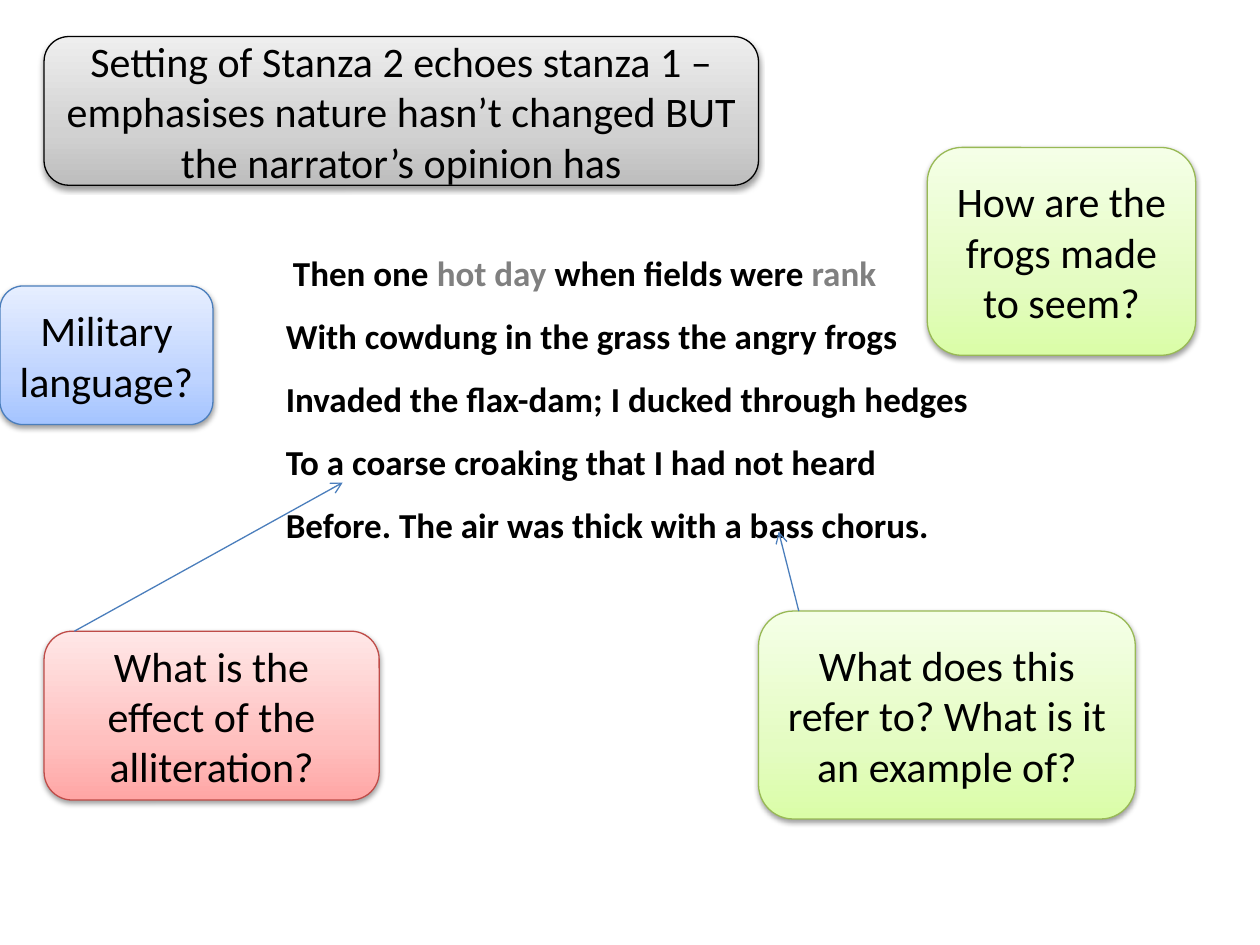
from copy import deepcopy

from lxml import etree
from pptx import Presentation
from pptx.dml.color import RGBColor
from pptx.enum.shapes import MSO_CONNECTOR, MSO_SHAPE
from pptx.enum.text import MSO_ANCHOR, MSO_AUTO_SIZE, PP_ALIGN
from pptx.oxml.ns import qn
from pptx.util import Inches, Pt

ROUNDED = MSO_SHAPE.ROUNDED_RECTANGLE
STRAIGHT = MSO_CONNECTOR.STRAIGHT
MIDDLE = MSO_ANCHOR.MIDDLE
FIT_SHAPE = MSO_AUTO_SIZE.SHAPE_TO_FIT_TEXT
CENTER = PP_ALIGN.CENTER

COLORS = {"black": "000000", "highlight": "808080", "arrow": "4B7EBC"}
THEMES = {
    "grey": {"line": "000000", "stops": ("BDBDBD", "D1D1D1", "EEEEEE")},
    "blue": {"line": "4B7EBC", "stops": ("A4C4FF", "BFD4FF", "E6EEFF")},
    "red": {"line": "BF4C48", "stops": ("FFA6A5", "FFC0BF", "FFE7E7")},
    "green": {"line": "98B955", "stops": ("DAFDA7", "E4FCC2", "F5FFE7")},
}
STOP_POSITIONS = (0, 0.35, 1)
VERSE_FONT = {"name": "Calibri", "size": Pt(20), "bold": True}
INDENT_FONT = {"name": "Calibri", "size": Pt(18), "bold": False}
NOTE_FONT = {"name": "Calibri", "size": Pt(24)}

STANZA_BOX = (2.17, 1.78, 5.83, 2.63)
STANZA = [
    [(" ", "black", INDENT_FONT), ("Then one ", "black", VERSE_FONT),
     ("hot day ", "highlight", VERSE_FONT),
     ("when fields were ", "black", VERSE_FONT),
     ("rank", "highlight", VERSE_FONT)],
    [("With cowdung in the grass the angry frogs", "black", VERSE_FONT)],
    [("Invaded the flax-dam; I ducked through hedges", "black", VERSE_FONT)],
    [("To a coarse croaking that I had not heard", "black", VERSE_FONT)],
    [("Before. The air was thick with a bass chorus.", "black", VERSE_FONT)],
]
NOTES = [
    ("Setting of Stanza 2 echoes stanza 1 – emphasises nature hasn’t changed "
     "BUT the narrator’s opinion has", "grey", (0.35, 0.29, 5.67, 1.18), None),
    ("Military language?", "blue", (0, 2.27, 1.69, 1.1), None),
    ("What is the effect of the alliteration?", "red",
     (0.35, 5.01, 2.66, 1.34), (0.24, 2.72, 3.83)),
    ("What does this refer to? What is it an example of?", "green",
     (6.02, 4.85, 2.99, 1.65), (0.32, 6.18, 4.22)),
    ("How are the frogs made to seem?", "green",
     (7.36, 1.17, 2.13, 1.65), None),
]


def rgb(value):
    """Turn a hex string into a colour."""
    return RGBColor.from_string(value)


def add_run(p, text, color, font):
    """Add a run in the given colour and font values."""
    r = p.add_run()
    r.text = text
    for name, value in font.items():
        setattr(r.font, name, value)
    r.font.color.rgb = rgb(COLORS[color])


def add_stanza(s, box):
    """Write the stanza, one paragraph for each line of verse."""
    tf = s.shapes.add_textbox(*map(Inches, box)).text_frame
    tf.word_wrap = True
    tf.auto_size = FIT_SHAPE
    for i, verse in enumerate(STANZA):
        p = tf.add_paragraph() if i else tf.paragraphs[0]
        p.line_spacing = 1.5
        for text, color, font in verse:
            add_run(p, text, color, font)


def fill_gradient(sp, stops):
    """Fill a shape with three colours running from bottom to top."""
    sp.fill.gradient()
    sp.fill.gradient_angle = 90
    first = sp._element.spPr.find(".//" + qn("a:gs"))
    first.addnext(deepcopy(first))
    for stop, position, color in zip(sp.fill.gradient_stops, STOP_POSITIONS, stops):
        stop.position = position
        stop.color.rgb = rgb(color)


def add_shadow(sp):
    """Give a shape a soft shadow falling straight down."""
    sp.shadow.inherit = False
    effects = sp._element.spPr.find(qn("a:effectLst"))
    shadow = etree.SubElement(effects, qn("a:outerShdw"), blurRad=str(Pt(3.15)),
                              dist=str(Pt(1.57)), dir="5400000", rotWithShape="0")
    color = etree.SubElement(shadow, qn("a:srgbClr"), val=COLORS["black"])
    etree.SubElement(color, qn("a:alpha"), val="38000")


def add_arrow(s, start, end):
    """Draw a thin line with an open arrowhead at its end."""
    line = s.shapes.add_connector(STRAIGHT, *map(Inches, start + end))
    line.line.color.rgb = rgb(COLORS["arrow"])
    line.line.width = Pt(0.75)
    etree.SubElement(line.line._get_or_add_ln(), qn("a:tailEnd"), type="arrow")
    etree.SubElement(line._element.spPr, qn("a:effectLst"))


def add_note(s, text, theme, box, pointer):
    """Place a rounded note, with an arrow from its top edge if it has one."""
    sp = s.shapes.add_shape(ROUNDED, *map(Inches, box))
    fill_gradient(sp, THEMES[theme]["stops"])
    sp.line.color.rgb = rgb(THEMES[theme]["line"])
    sp.line.width = Pt(0.75)
    add_shadow(sp)
    tf = sp.text_frame
    tf.word_wrap = True
    tf.vertical_anchor = MIDDLE
    p = tf.paragraphs[0]
    p.alignment = CENTER
    add_run(p, text, "black", NOTE_FONT)
    if pointer:
        offset, x, y = pointer
        add_arrow(s, (box[0] + offset, box[1]), (x, y))


def main():
    """Build the annotated stanza slide."""
    prs = Presentation()
    prs.slide_width, prs.slide_height = Inches(10), Inches(7.5)
    s = prs.slides.add_slide(prs.slide_layouts[6])
    add_stanza(s, STANZA_BOX)
    for note in NOTES:
        add_note(s, *note)
    prs.save("out.pptx")


if __name__ == "__main__":
    main()
